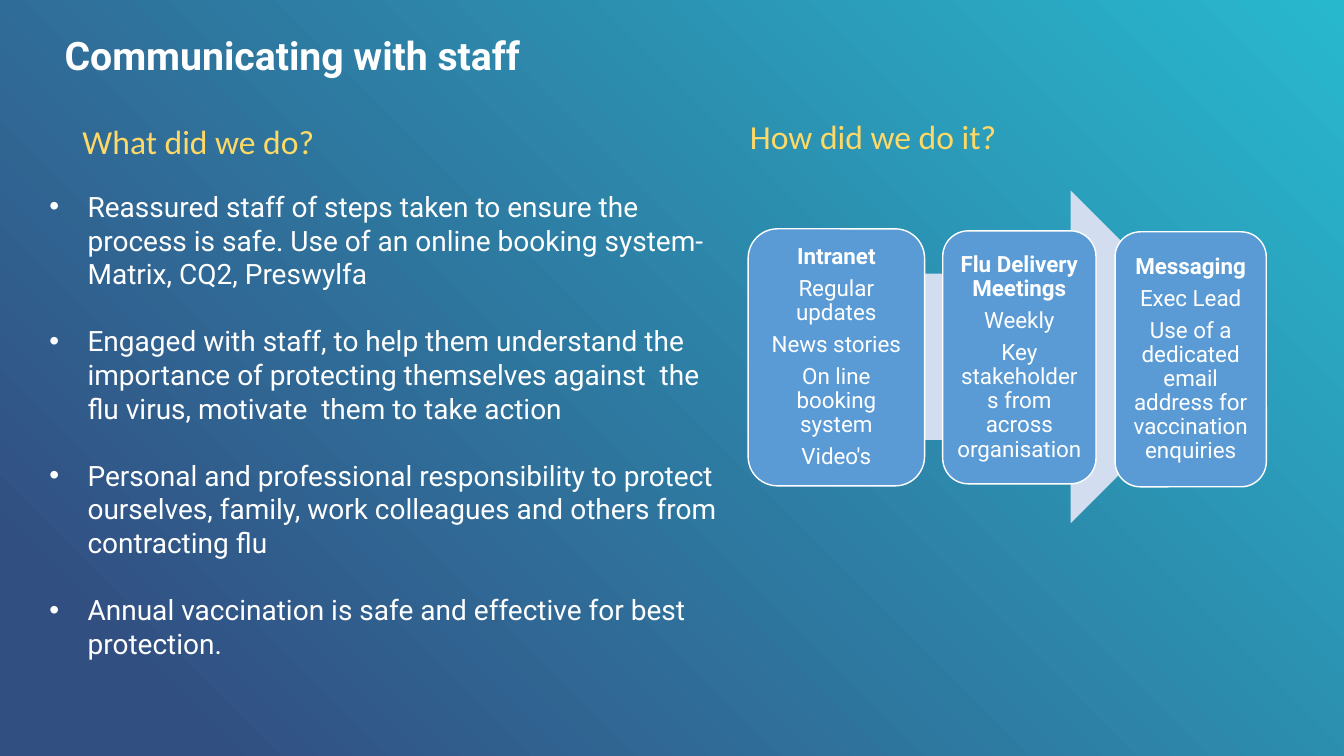
import pptx
import pptx.util
import pptx.dml.color
import pptx.enum.shapes
import pptx.enum.text
from lxml import etree

Inches, Pt = pptx.util.Inches, pptx.util.Pt
SHAPES = pptx.enum.shapes.MSO_SHAPE
ANCHOR = pptx.enum.text.MSO_ANCHOR
ALIGN = pptx.enum.text.PP_ALIGN

COLOURS = {
    "navy": "324F82", "teal": "28B8CE", "white": "FFFFFF",
    "yellow": "FFD966", "arrow": "D2DEEF", "card": "5B9BD5",
}
TITLE = "Communicating with staff"
HEADINGS = [("What did we do?", 0.72, 1.15), ("How did we do it?", 7.34, 1.1)]
ACTIONS = [
    "Reassured staff of steps taken to ensure the process is safe. "
    "Use of an online booking system-Matrix, CQ2, Preswylfa",
    "Engaged with staff, to help them understand the importance of protecting "
    "themselves against  the flu virus, motivate  them to take action",
    "Personal and professional responsibility to protect ourselves, family, "
    "work colleagues and others from contracting flu",
    "Annual vaccination is safe and effective for best protection.",
]
# Each card: left, top, width, height, then its lines, the first being the heading
CARDS = [
    ((7.42, 2.27, 1.75, 2.55),
     ["Intranet", "Regular updates", "News stories", "On line booking system", "Video's"]),
    ((9.35, 2.29, 1.52, 2.51),
     ["Flu Delivery Meetings", "Weekly", "Key stakeholders from across organisation"]),
    ((11.06, 2.3, 1.5, 2.53),
     ["Messaging", "Exec Lead",
      "Use of a dedicated email address for vaccination enquiries"]),
]
ARROW = (7.71, 1.89, 4.56, 3.3)


def colour(name):
    return pptx.dml.color.RGBColor.from_string(COLOURS[name])


def add_run(para, text, size, font="Roboto", tint="white", bold=False):
    span = para.add_run()
    span.text = text
    span.font.size = Pt(size)
    span.font.name = font
    span.font.bold = bold
    span.font.color.rgb = colour(tint)


def paragraphs(frame, lines):
    """Yield a paragraph for each line, starting with the one already there."""
    for index, line in enumerate(lines):
        yield index, line, frame.add_paragraph() if index else frame.paragraphs[0]


def set_insets(frame, inset):
    frame.margin_left = frame.margin_right = Inches(inset)
    frame.margin_top = frame.margin_bottom = Inches(inset)


def add_frame(slide, area):
    frame = slide.shapes.add_textbox(*map(Inches, area)).text_frame
    frame.word_wrap = True
    return frame


def add_filled(slide, kind, area, fill):
    shape = slide.shapes.add_shape(kind, *map(Inches, area))
    shape.shadow.inherit = False
    shape.fill.solid()
    shape.fill.fore_color.rgb = colour(fill)
    shape.line.fill.background()
    return shape


def add_bullet(para, indent):
    properties = para._p.get_or_add_pPr()
    properties.set("marL", str(Inches(indent)))
    properties.set("indent", str(-Inches(indent)))
    namespace = "{http://schemas.openxmlformats.org/drawingml/2006/main}"
    etree.SubElement(properties, namespace + "buFont", typeface="Arial")
    etree.SubElement(properties, namespace + "buChar", char="•")


def set_background(slide):
    fill = slide.background.fill
    fill.gradient()
    fill.gradient_angle = 45
    for stop, position, name in zip(fill.gradient_stops, (0.1, 1), ("navy", "teal")):
        stop.position = position
        stop.color.rgb = colour(name)


def add_title(slide):
    frame = add_frame(slide, (0.64, 0.36, 11.77, 0.43))
    set_insets(frame, 0)
    para = frame.paragraphs[0]
    para.line_spacing = 0.9
    add_run(para, TITLE, 28, bold=True)


def add_actions(slide):
    frame = add_frame(slide, (0.39, 1.83, 7.01, 4.81))
    for index, line, para in paragraphs(frame, ACTIONS):
        add_bullet(para, 0.38)
        if index:
            para.space_before = Pt(24)
        add_run(para, line, 20)


def add_card(slide, area, lines):
    card = add_filled(slide, SHAPES.ROUNDED_RECTANGLE, area, "card")
    card.line.color.rgb = colour("white")
    card.line.width = Pt(1)
    frame = card.text_frame
    frame.word_wrap = True
    frame.vertical_anchor = ANCHOR.MIDDLE
    set_insets(frame, 0.07)
    for index, line, para in paragraphs(frame, lines):
        para.alignment = ALIGN.CENTER
        para.line_spacing = 0.9
        para.space_after = Pt(5.6)
        add_run(para, line, 16, bold=index == 0)


def main():
    deck = pptx.Presentation()
    deck.slide_width, deck.slide_height = Inches(13.33), Inches(7.5)
    slide = deck.slides.add_slide(deck.slide_layouts[6])
    set_background(slide)
    add_title(slide)
    add_actions(slide)
    for text, left, top in HEADINGS:
        frame = add_frame(slide, (left, top, 4.87, 0.5))
        add_run(frame.paragraphs[0], text, 24, "Calibri", "yellow")
    add_filled(slide, SHAPES.RIGHT_ARROW, ARROW, "arrow")
    for area, lines in CARDS:
        add_card(slide, area, lines)
    deck.save("out.pptx")


if __name__ == "__main__":
    main()
